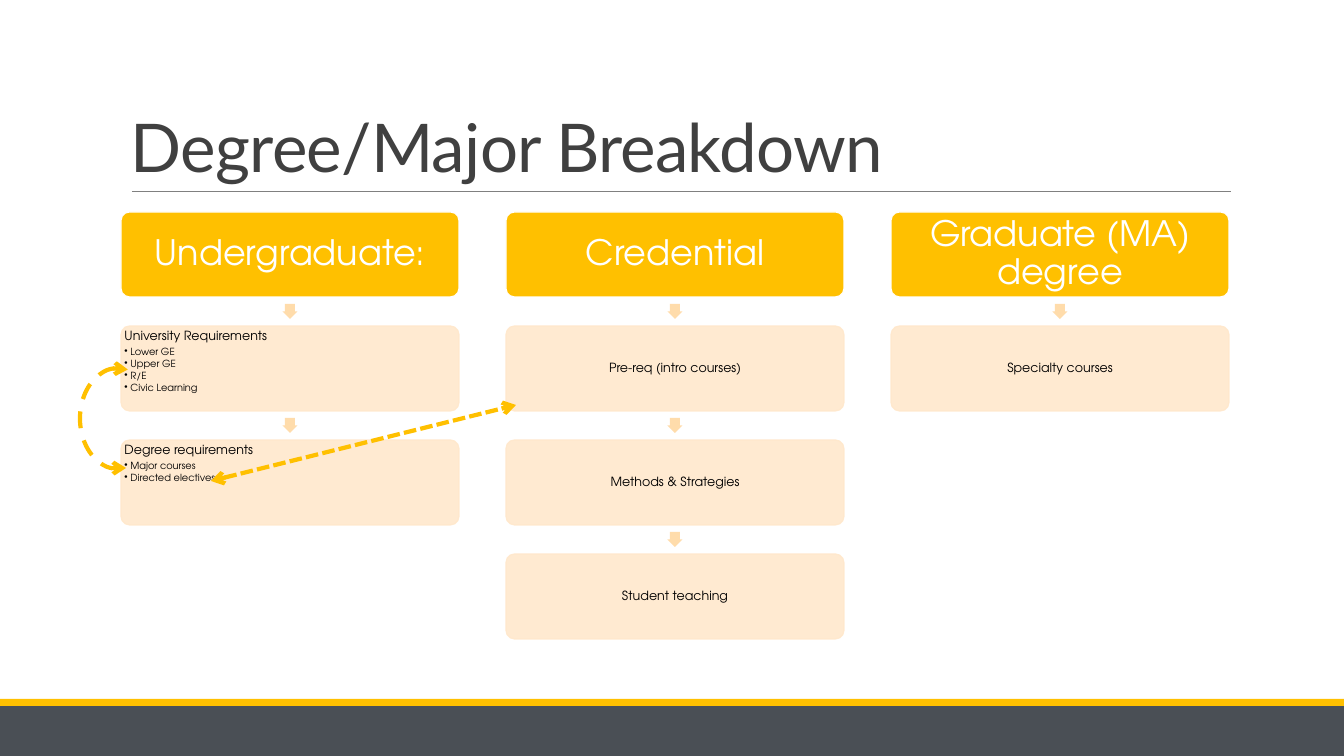
from lxml import etree
from pptx import Presentation, util as u
from pptx.dml.color import RGBColor
from pptx.enum import dml, shapes, text
from pptx.oxml.ns import qn

WHITE = RGBColor(0xFF, 0xFF, 0xFF)
BLACK = RGBColor(0, 0, 0)
INK = RGBColor(0x40, 0x40, 0x40)
GRAY = RGBColor(0x80, 0x80, 0x80)
SLATE = RGBColor(0x4A, 0x4F, 0x55)
GOLD = RGBColor(0xFF, 0xC0, 0x00)
PEACH = RGBColor(0xFF, 0xE8, 0xCC)
TAN = RGBColor(0xFF, 0xDC, 0xAB)
HEAD_FONT, BODY_FONT = "Lato", "TeX Gyre Adventor"
WIDE, HIGH = 1344, 756
SCALE = 12192000 / WIDE
KIND = shapes.MSO_SHAPE

# Each track is a heading and its steps; a step is a label and its bullets.
TRACKS = [
    ("Undergraduate:", [
        ("University Requirements",
         ["Lower GE", "Upper GE", "R/E", "Civic Learning"]),
        ("Degree requirements", ["Major courses", "Directed electives"]),
    ]),
    ("Credential", [
        ("Pre-req (intro courses)", []),
        ("Methods & Strategies", []),
        ("Student teaching", []),
    ]),
    ("Graduate (MA) degree", [("Specialty courses", [])]),
]


def px(*nums):
    return [u.Emu(round(n * SCALE)) for n in nums]


def add_shape(slide, kind, box, fill=None, line=None, width=0.85):
    shape = slide.shapes.add_shape(kind, *px(*box))
    shape.shadow.inherit = False
    for part, color in ((shape.fill, fill), (shape.line.fill, line)):
        if color is None:
            part.background()
        else:
            part.solid()
            part.fore_color.rgb = color
    if line is not None:
        shape.line.width = u.Pt(width)
    return shape


def add_line(slide, start, end, color, width):
    line = slide.shapes.add_connector(
        shapes.MSO_CONNECTOR.STRAIGHT, *px(*start, *end))
    line.line.color.rgb = color
    line.line.width = u.Pt(width)
    etree.SubElement(line.element.spPr, qn("a:effectLst"))
    return line


def add_tips(shape, dash):
    """Dash the outline and put an open arrowhead at both ends."""
    shape.line.dash_style = dash
    outline = shape.element.spPr.find(qn("a:ln"))
    for end in ("a:headEnd", "a:tailEnd"):
        etree.SubElement(outline, qn(end), type="arrow")


def set_font(para, name, size, color):
    para.font.name = name
    para.font.size = u.Pt(size)
    para.font.color.rgb = color


def write(shape, label, bullets, size, color, inset):
    frame = shape.text_frame
    frame.word_wrap = True
    frame.margin_left = frame.margin_right = px(inset)[0]
    frame.margin_top = frame.margin_bottom = px(inset)[0]
    anchor = text.MSO_ANCHOR
    frame.vertical_anchor = anchor.TOP if bullets else anchor.MIDDLE
    align = text.PP_ALIGN.LEFT if bullets else text.PP_ALIGN.CENTER
    for i, line in enumerate([label, *bullets]):
        para = frame.add_paragraph() if i else frame.paragraphs[0]
        para.text = line
        para.alignment = align
        para.line_spacing = 0.9
        para.space_after = u.Pt(1 if i else 3)
        if i:
            props = para._p.get_or_add_pPr()
            indent = px(6)[0]
            props.set("marL", str(indent))
            props.set("indent", str(-indent))
            etree.SubElement(props, qn("a:buChar"), char="•")
        set_font(para, BODY_FONT, 7 if i else size, color)


def add_card(slide, box, fill, edge):
    card = add_shape(slide, KIND.ROUNDED_RECTANGLE, box, fill, edge)
    card.adjustments[0] = 0.1
    return card


def add_track(slide, box, pitch, head, steps):
    """Stack the steps below the heading, whose place is the box."""
    left, top, width, height = box
    write(add_card(slide, box, GOLD, WHITE), head, [], 25, WHITE, 3)
    side = 15
    for row, (label, bullets) in enumerate(steps, 1):
        y = top + row * pitch
        gap = pitch - height
        arrow = add_shape(
            slide, KIND.DOWN_ARROW,
            (left + (width - side) / 2, y - (gap + side) / 2, side, side), TAN)
        arrow.adjustments[0] = 0.667
        card = add_card(slide, (left, y, width, height), PEACH, PEACH)
        for color in card.element.spPr.iter(qn("a:srgbClr")):
            etree.SubElement(color, qn("a:alpha"), val="90000")
        write(card, label, bullets, 9, BLACK, 1)


def add_title(slide, box):
    left, top, width, height = box
    frame = slide.shapes.add_textbox(*px(*box)).text_frame
    frame.word_wrap = True
    frame.vertical_anchor = text.MSO_ANCHOR.BOTTOM
    para = frame.paragraphs[0]
    para.text = "Degree/Major Breakdown"
    para.line_spacing = 0.85
    set_font(para, HEAD_FONT, 48, INK)
    para._p.pPr.find(qn("a:defRPr")).set("spc", "-50")
    base = top + height
    add_line(slide, (left + 11, base), (left + width + 1, base), GRAY, 0.5)


def add_footer(slide, box):
    left, top, width, height = box
    stripe = 7
    add_shape(slide, KIND.RECTANGLE, box, SLATE)
    add_shape(slide, KIND.RECTANGLE, (left, top - stripe, width, stripe), GOLD)


def add_links(slide, box):
    """Link the two degree steps, and the electives to the credential."""
    left, top, width, height = box
    dash = dml.MSO_LINE
    link = add_line(slide, (left + 90, top + 269), (left + 395, top + 193),
                    GOLD, 3)
    add_tips(link, dash.SQUARE_DOT)
    loop = add_shape(slide, KIND.ARC, (left - 41, top + 156, 77, 101),
                     line=GOLD, width=3)
    loop.adjustments[0] = 155.53
    loop.adjustments[1] = 59.23
    loop.element.spPr.find(qn("a:xfrm")).set("flipH", "1")
    add_tips(loop, dash.DASH)


def main():
    deck = Presentation()
    deck.slide_width, deck.slide_height = px(WIDE, HIGH)
    slide = deck.slides.add_slide(deck.slide_layouts[6])
    add_footer(slide, (0, 706, WIDE, 50))
    add_title(slide, (121, 31, 1109, 160))
    left, top, width, height = 121, 212, 338, 85
    for col, (head, steps) in enumerate(TRACKS):
        add_track(slide, (left + col * 385, top, width, height), 114,
                  head, steps)
    add_links(slide, (left, top, 1108, 427))
    deck.save("out.pptx")


if __name__ == "__main__":
    main()
